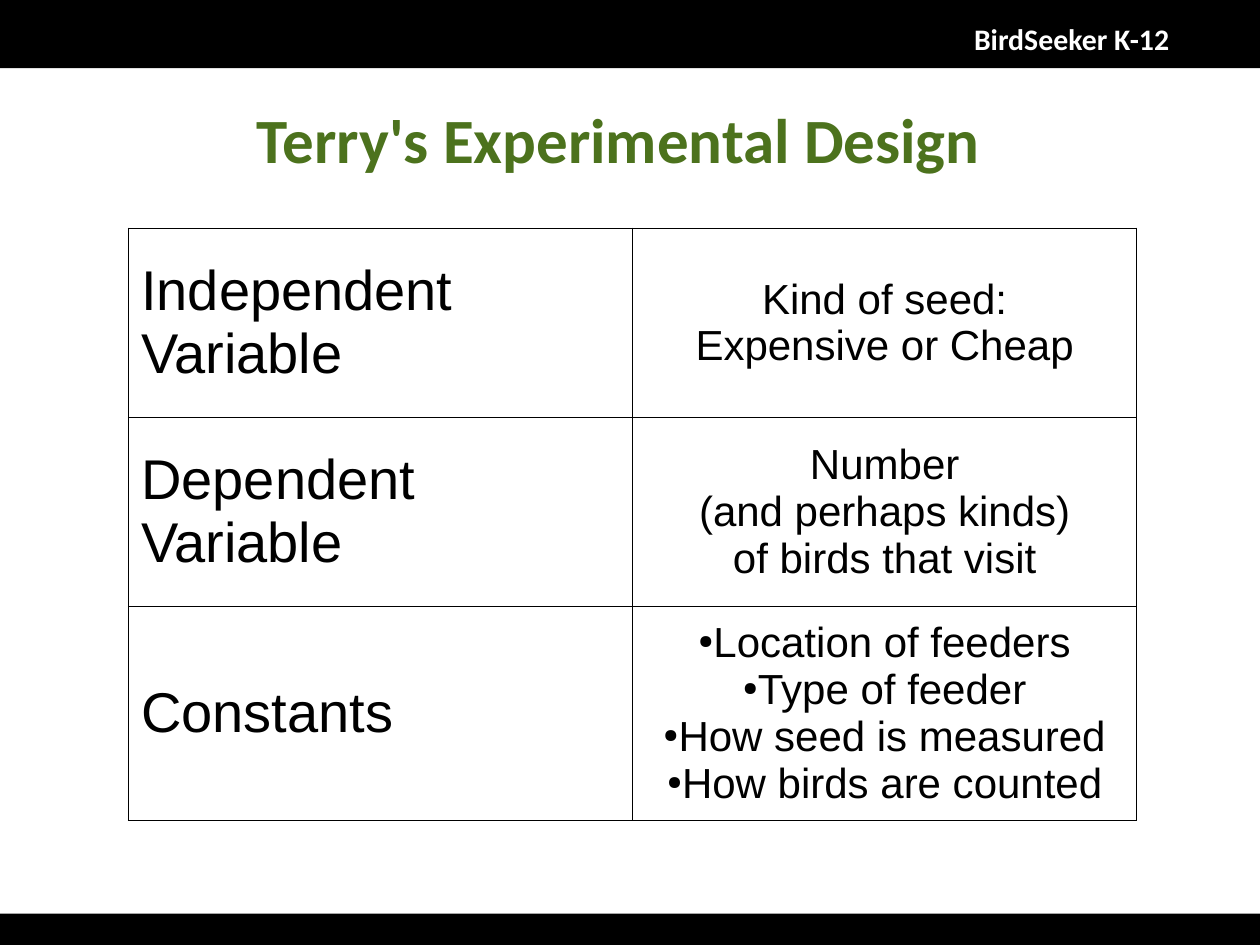
from dataclasses import dataclass

from lxml import etree
from pptx import Presentation
from pptx import util as u
from pptx.dml.color import RGBColor
from pptx.enum import shapes, text
from pptx.oxml import ns


@dataclass(frozen=True)
class Theme:
    ink: str = "000000"
    paper: str = "FFFFFF"
    green: str = "4C721D"
    heading_font: str = "Calibri"
    table_font: str = "Arial"
    brand_size: float = 17
    title_size: float = 36
    label_size: float = 32
    detail_size: float = 24
    border: float = 1


class SlideBuilder:
    def __init__(self, page, theme):
        self.page = page
        self.theme = theme

    def add_span(self, para, words, font, size, color, bold=False):
        span = para.add_run()
        span.text = words
        span.font.name = font
        span.font.size = u.Pt(size)
        span.font.bold = bold
        span.font.color.rgb = RGBColor.from_string(color)

    def bar(self, left, top, width, height):
        bar = self.page.shapes.add_shape(
            shapes.MSO_SHAPE.RECTANGLE,
            u.Pt(left), u.Pt(top), u.Pt(width), u.Pt(height))
        bar.shadow.inherit = False
        bar.fill.solid()
        bar.fill.fore_color.rgb = RGBColor.from_string(self.theme.ink)
        bar.line.fill.background()

    def label(self, words, left, top, width, height):
        box = self.page.shapes.add_textbox(
            u.Pt(left), u.Pt(top), u.Pt(width), u.Pt(height))
        box.text_frame.word_wrap = True
        self.add_span(box.text_frame.paragraphs[0], words,
                      self.theme.heading_font, self.theme.brand_size,
                      self.theme.paper, bold=True)

    def title(self, words, left, top, width, height):
        title = self.page.shapes.title
        title.left, title.top = u.Pt(left), u.Pt(top)
        title.width, title.height = u.Pt(width), u.Pt(height)
        frame = title.text_frame
        frame.vertical_anchor = text.MSO_ANCHOR.TOP
        frame.auto_size = text.MSO_AUTO_SIZE.NONE
        para = frame.paragraphs[0]
        para.alignment = text.PP_ALIGN.CENTER
        self.add_span(para, words, self.theme.heading_font,
                      self.theme.title_size, self.theme.green, bold=True)

    def bullet(self, para):
        props = para._p.get_or_add_pPr()
        props.set("marL", "0")
        props.set("indent", "0")
        etree.SubElement(props, ns.qn("a:buSzPct")).set("val", "45000")
        etree.SubElement(props, ns.qn("a:buChar")).set("char", "●")

    def outline(self, cell):
        props = cell._tc.get_or_add_tcPr()
        for side in ("lnL", "lnR", "lnT", "lnB"):
            line = etree.SubElement(props, ns.qn(f"a:{side}"))
            line.set("w", str(u.Pt(self.theme.border)))
            fill = etree.SubElement(line, ns.qn("a:solidFill"))
            etree.SubElement(fill, ns.qn("a:srgbClr")).set("val", self.theme.ink)

    def cell(self, cell, lines, size, align, bulleted=False):
        self.outline(cell)
        cell.fill.background()
        cell.vertical_anchor = text.MSO_ANCHOR.MIDDLE
        frame = cell.text_frame
        for index, words in enumerate(lines):
            para = frame.add_paragraph() if index else frame.paragraphs[0]
            para.alignment = align
            if bulleted:
                self.bullet(para)
            self.add_span(para, words, self.theme.table_font, size,
                          self.theme.ink)

    def table(self, rows, left, top, width, row_height):
        frame = self.page.shapes.add_table(
            len(rows), 2, u.Pt(left), u.Pt(top),
            u.Pt(width), u.Pt(row_height * len(rows)))
        table = frame.table
        table.first_row = table.horz_banding = False
        for index, (name, details, bulleted) in enumerate(rows):
            self.cell(table.cell(index, 0), [name], self.theme.label_size,
                      text.PP_ALIGN.LEFT)
            self.cell(table.cell(index, 1), details, self.theme.detail_size,
                      text.PP_ALIGN.CENTER, bulleted)


# Rows of the design table: name, details, bulleted
DESIGN = [
    ("Independent Variable", ["Kind of seed:", "Expensive or Cheap"], False),
    ("Dependent Variable",
     ["Number", "(and perhaps kinds)", "of birds that visit"], False),
    ("Constants",
     ["Location of feeders", "Type of feeder", "How seed is measured",
      "How birds are counted"], True),
]


def main():
    deck = Presentation()
    deck.slide_width, deck.slide_height = u.Pt(720), u.Pt(540)
    page = deck.slides.add_slide(deck.slide_layouts[5])
    builder = SlideBuilder(page, Theme())

    # Header and footer bars
    builder.bar(0, 522, 720, 18)
    builder.bar(0, 0, 720, 39)
    builder.label("BirdSeeker K-12", 549.5, 8.5, 134.5, 28)

    # Title and design table
    builder.title("Terry's Experimental Design", 14.5, 54, 678, 59)
    builder.table(DESIGN, 73.5, 130.5, 576, 108)

    deck.save("out.pptx")


if __name__ == "__main__":
    main()
